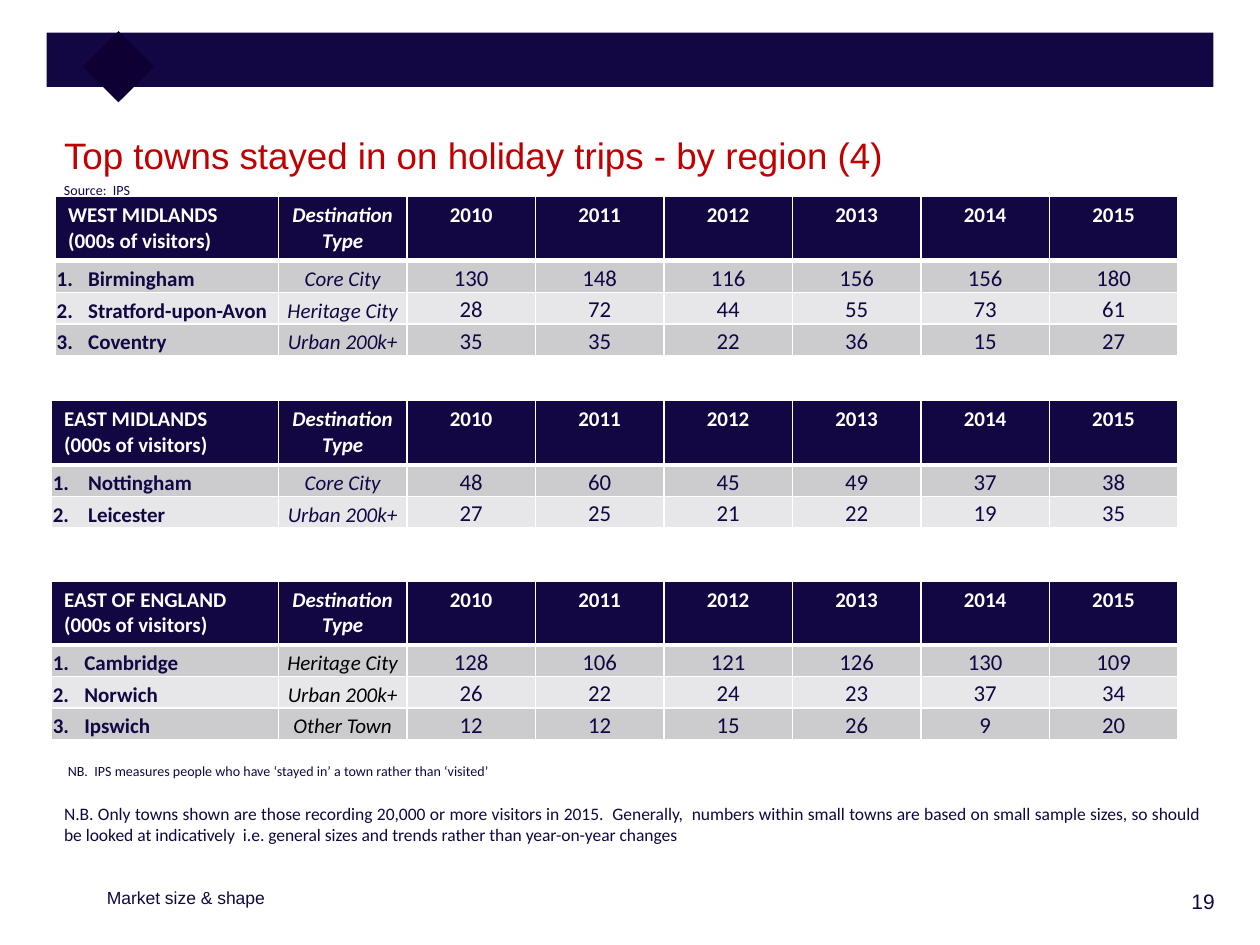
from copy import deepcopy

from pptx import Presentation
from pptx.dml.color import RGBColor
from pptx.enum.shapes import MSO_SHAPE as Shape
from pptx.enum.text import MSO_ANCHOR as Anchor, PP_ALIGN as Align
from pptx.oxml import parse_xml
from pptx.oxml.ns import nsdecls, qn
from pptx.util import Inches, Pt

NAVY, DIAMOND, WHITE, BLACK, RED = "120742", "0E0033", "FFFFFF", "000000", "C00000"
BANDS = ["CCCCCF", "E7E7E9"]
HEADINGS = ["Destination Type", "2010", "2011", "2012", "2013", "2014", "2015"]
UNIT = "(000s of visitors)"
YEAR_WIDTH, HEADER_HEIGHT, TOWN_HEIGHT, TABLE_RIGHT = 1.02, 0.51, 0.25, 9.35

REGIONS = [
    {"name": "WEST MIDLANDS", "left": 0.44, "top": 1.56, "indent": 0.25, "type_color": NAVY, "towns": [
        ("Birmingham", "Core City", 130, 148, 116, 156, 156, 180),
        ("Stratford-upon-Avon", "Heritage City", 28, 72, 44, 55, 73, 61),
        ("Coventry", "Urban 200k+", 35, 35, 22, 36, 15, 27),
    ]},
    {"name": "EAST MIDLANDS", "left": 0.41, "top": 3.18, "indent": 0.28, "type_color": NAVY, "towns": [
        ("Nottingham", "Core City", 48, 60, 45, 49, 37, 38),
        ("Leicester", "Urban 200k+", 27, 25, 21, 22, 19, 35),
    ]},
    {"name": "EAST OF ENGLAND", "left": 0.41, "top": 4.61, "indent": 0.25, "type_color": BLACK, "towns": [
        ("Cambridge", "Heritage City", 128, 106, 121, 126, 130, 109),
        ("Norwich", "Urban 200k+", 26, 22, 24, 23, 37, 34),
        ("Ipswich", "Other Town", 12, 12, 15, 26, 9, 20),
    ]},
]

BANNER = [
    ((0.37, 0.26, 9.26, 0.43), NAVY, 0),
    ((0.74, 0.33, 0.4, 0.4), DIAMOND, 45),
]

TEXTS = [
    ("19", (8.53, 7, 1.21, 0.36), Align.RIGHT, 0.05, {"size": 12, "name": "Arial", "color": NAVY}),
    ("N.B. Only towns shown are those recording 20,000 or more visitors in 2015.  Generally,  numbers within "
     "small towns are based on small sample sizes, so should be looked at indicatively  i.e. general sizes and "
     "trends rather than year-on-year changes",
     (0.41, 6.32, 9.21, 0.28), Align.JUSTIFY, 0.05, {"size": 10, "name": "Calibri", "color": NAVY}),
    ("Market size & shape", (0.75, 6.99, 2.67, 0.3), Align.LEFT, 0.05,
     {"size": 10, "name": "Arial", "color": NAVY}),
    ("Top towns stayed in on holiday trips - by region (4)", (0.41, 0.95, 9.69, 0.61), Align.LEFT, 0.1,
     {"size": 21, "name": "Arial", "color": RED}),
    ("Source:  IPS", (0.41, 1.39, 0.8, 0.18), Align.LEFT, 0.05,
     {"size": 8, "name": "Calibri", "color": NAVY}),
    ("NB.  IPS measures people who have ‘stayed in’ a town rather than ‘visited’",
     (0.44, 6, 4.1, 0.18), Align.LEFT, 0.05, {"size": 8, "name": "Calibri", "color": NAVY}),
]


def paint(fill, color):
    fill.solid()
    fill.fore_color.rgb = RGBColor.from_string(color)


def write(paragraph, text, align, style):
    paragraph.text = text
    paragraph.alignment = align
    for run in paragraph.runs:
        for key, value in style.items():
            if key == "color":
                run.font.color.rgb = RGBColor.from_string(value)
            else:
                setattr(run.font, key, Pt(value) if key == "size" else value)
    for line_break in paragraph._p.findall(qn("a:br")):
        line_break.insert(0, deepcopy(paragraph.runs[0]._r.rPr))


def number(paragraph, start, indent):
    properties = paragraph._p.get_or_add_pPr()
    properties.set("marL", str(Inches(indent)))
    properties.set("indent", str(-Inches(indent)))
    properties.append(parse_xml(
        f'<a:buFont {nsdecls("a")} typeface="+mj-lt"/>'))
    properties.append(parse_xml(
        f'<a:buAutoNum {nsdecls("a")} type="arabicPeriod" startAt="{start}"/>'))


def border(cell, row):
    widths = {"lnL": 1, "lnR": 1, "lnT": 3 if row == 1 else 1, "lnB": 3 if row == 0 else 1}
    for side, width in widths.items():
        cell._tc.get_or_add_tcPr().append(parse_xml(
            f'<a:{side} {nsdecls("a")} w="{Pt(width)}"><a:solidFill>'
            f'<a:srgbClr val="{WHITE}"/></a:solidFill></a:{side}>'))


def cell_style(row, column, type_color):
    style = {"size": 12, "name": "Calibri", "color": NAVY, "bold": False, "italic": column == 1}
    if row == 0:
        style.update(color=WHITE, bold=True)
    elif column == 0:
        style.update(bold=True)
    elif column == 1:
        style.update(color=type_color)
    else:
        style.update(size=13)
    return style


def add_region(slide, region):
    rows = [[f"{region['name']}\n{UNIT}", *HEADINGS], *region["towns"]]
    name_width = TABLE_RIGHT - region["left"] - YEAR_WIDTH * len(HEADINGS)
    widths = [name_width] + [YEAR_WIDTH] * len(HEADINGS)
    heights = [HEADER_HEIGHT] + [TOWN_HEIGHT] * len(region["towns"])
    place = (region["left"], region["top"], sum(widths), sum(heights))
    table = slide.shapes.add_table(len(rows), len(widths), *map(Inches, place)).table
    for column, width in zip(table.columns, widths):
        column.width = Inches(width)
    for r, (values, height) in enumerate(zip(rows, heights)):
        table.rows[r].height = Inches(height)
        for c, value in enumerate(values):
            cell = table.cell(r, c)
            border(cell, r)
            paint(cell.fill, BANDS[(r - 1) % 2] if r else NAVY)
            paragraph = cell.text_frame.paragraphs[0]
            if r:
                cell.vertical_anchor = Anchor.BOTTOM
                for side, inset in {"left": 0.01, "right": 0.01, "top": 0.01, "bottom": 0}.items():
                    setattr(cell, f"margin_{side}", Inches(inset))
                if c == 0:
                    number(paragraph, r, region["indent"])
            write(paragraph, str(value), Align.CENTER if c else Align.LEFT,
                  cell_style(r, c, region["type_color"]))


def main():
    deck = Presentation()
    deck.slide_width, deck.slide_height = Inches(10), Inches(7.5)
    slide = deck.slides.add_slide(deck.slide_layouts[6])
    for place, color, rotation in BANNER:
        band = slide.shapes.add_shape(Shape.RECTANGLE, *map(Inches, place))
        band.shadow.inherit = False
        band.line.fill.background()
        band.rotation = rotation
        paint(band.fill, color)
    for region in REGIONS:
        add_region(slide, region)
    for text, place, align, top_inset, style in TEXTS:
        frame = slide.shapes.add_textbox(*map(Inches, place)).text_frame
        frame.word_wrap = True
        frame.margin_top = Inches(top_inset)
        write(frame.paragraphs[0], text, align, style)
    deck.save("out.pptx")


if __name__ == "__main__":
    main()
